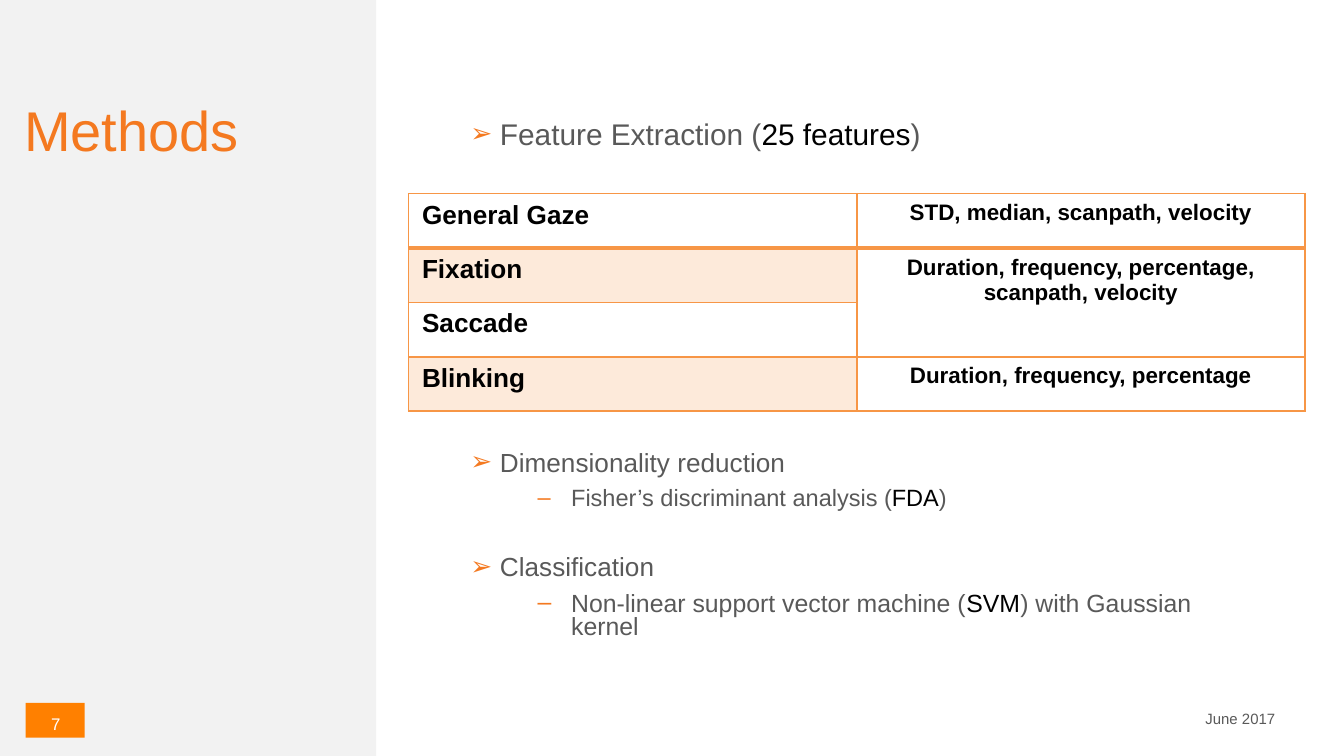
from lxml import etree
from pptx import Presentation
from pptx.dml.color import RGBColor
from pptx.enum.shapes import MSO_SHAPE
from pptx.enum.text import MSO_ANCHOR, PP_ALIGN
from pptx.oxml.ns import qn
from pptx.util import Inches, Pt

RECTANGLE = MSO_SHAPE.RECTANGLE
TOP = MSO_ANCHOR.TOP
LEFT, CENTER = PP_ALIGN.LEFT, PP_ALIGN.CENTER

ORANGE = RGBColor(0xF4, 0x79, 0x20)
BADGE_ORANGE = RGBColor(0xFF, 0x80, 0x00)
BORDER_ORANGE = RGBColor(0xF7, 0x96, 0x46)
BAND = RGBColor(0xFD, 0xEA, 0xDA)
PANEL = RGBColor(0xF2, 0xF2, 0xF2)
GRAY = RGBColor(0x59, 0x59, 0x59)
BLACK = RGBColor(0, 0, 0)
WHITE = RGBColor(0xFF, 0xFF, 0xFF)
FONT = "Arial"

SLIDE_WIDTH = 10
SLIDE_HEIGHT = SLIDE_WIDTH * 9 / 16

TITLE = "Methods"
DATE = "June 2017"
PAGE = "7"

FEATURES = [
    ("General Gaze", "STD, median, scanpath, velocity"),
    ("Fixation", "Duration, frequency, percentage, scanpath, velocity"),
    ("Saccade", ""),
    ("Blinking", "Duration, frequency, percentage"),
]
MERGED_ROWS = (1, 2)

EXTRACTION = [
    (1, 16, 0, [("Feature Extraction (", GRAY), ("25 features", BLACK), (")", GRAY)]),
]
STEPS = [
    (1, 14, 0, [("Dimensionality reduction", GRAY)]),
    (2, 12.6, 0, [("Fisher’s discriminant analysis (", GRAY), ("FDA", BLACK), (")", GRAY)]),
    (1, 14, 15, [("Classification", GRAY)]),
    (2, 13.3, 0, [("Non-linear support vector machine (", GRAY), ("SVM", BLACK),
                  (") with Gaussian kernel", GRAY)]),
]
LEVELS = {
    1: {"bullet": "➢", "margin": 0.72, "hang": 0.22, "bullet_size": 14, "spacing": 1.0},
    2: {"bullet": "–", "margin": 1.25, "hang": 0.25, "bullet_size": None, "spacing": 0.8},
}


def add_run(paragraph, text, size, color, bold=False):
    run = paragraph.add_run()
    run.text = text
    run.font.name = FONT
    run.font.size = Pt(size)
    run.font.bold = bold
    run.font.color.rgb = color


def add_rectangle(slide, left, top, width, height, color):
    shape = slide.shapes.add_shape(
        RECTANGLE, Inches(left), Inches(top), Inches(width), Inches(height))
    shape.shadow.inherit = False
    shape.fill.solid()
    shape.fill.fore_color.rgb = color
    shape.line.fill.background()


def add_text_box(slide, left, top, width, height, wrap=True):
    box = slide.shapes.add_textbox(
        Inches(left), Inches(top), Inches(width), Inches(height))
    box.text_frame.word_wrap = wrap
    return box.text_frame


def add_bullet(paragraph, level, size):
    properties = paragraph._p.get_or_add_pPr()
    properties.set("marL", str(Inches(level["margin"])))
    properties.set("indent", str(-Inches(level["hang"])))
    color = etree.SubElement(properties, qn("a:buClr"))
    etree.SubElement(color, qn("a:srgbClr"), val=str(ORANGE))
    percent = (level["bullet_size"] or size) / size * 100
    etree.SubElement(properties, qn("a:buSzPct"), val=str(round(percent) * 1000))
    etree.SubElement(properties, qn("a:buFont"), typeface=FONT)
    etree.SubElement(properties, qn("a:buChar"), char=level["bullet"])


def add_bullet_list(slide, left, top, width, height, items):
    frame = add_text_box(slide, left, top, width, height)
    frame.margin_left = Inches(0.2)
    for index, (level_number, size, space_before, runs) in enumerate(items):
        level = LEVELS[level_number]
        paragraph = frame.paragraphs[0] if index == 0 else frame.add_paragraph()
        add_bullet(paragraph, level, size)
        paragraph.line_spacing = level["spacing"]
        paragraph.space_before = Pt(space_before)
        paragraph.space_after = Pt(6)
        for text, color in runs:
            add_run(paragraph, text, size, color)


def set_borders(cell, widths):
    properties = cell._tc.get_or_add_tcPr()
    for index, (side, width) in enumerate(widths.items()):
        line = etree.Element(qn("a:" + side), w=str(Pt(width)))
        fill = etree.SubElement(line, qn("a:solidFill"))
        etree.SubElement(fill, qn("a:srgbClr"), val=str(BORDER_ORANGE))
        properties.insert(index, line)


def add_feature_table(slide):
    rows = len(FEATURES)
    frame = slide.shapes.add_table(
        rows, 2, Inches(3.04), Inches(1.44), Inches(6.67), Inches(1.62))
    table = frame.table
    first, last = MERGED_ROWS
    table.cell(first, 1).merge(table.cell(last, 1))
    for row, texts in enumerate(FEATURES):
        for column, text in enumerate(texts):
            cell = table.cell(row, column)
            cell.fill.solid()
            cell.fill.fore_color.rgb = BAND if column == 0 and row % 2 else WHITE
            set_borders(cell, {"lnL": 1, "lnR": 1,
                               "lnT": 2 if row == 1 else 1,
                               "lnB": 2 if row == 0 else 1})
            if text:
                paragraph = cell.text_frame.paragraphs[0]
                paragraph.alignment = CENTER if column else LEFT
                add_run(paragraph, text, 12 if column else 14, BLACK, bold=True)


def place_title(slide):
    title = slide.shapes.title
    title.left, title.top = Inches(0.08), Inches(0.66)
    title.width, title.height = Inches(2.54), Inches(2.59)
    title.text_frame.vertical_anchor = TOP
    paragraph = title.text_frame.paragraphs[0]
    paragraph.alignment = LEFT
    add_run(paragraph, TITLE, 30, ORANGE)
    slide.shapes._spTree.append(title._element)


def main():
    presentation = Presentation()
    presentation.slide_width = Inches(SLIDE_WIDTH)
    presentation.slide_height = Inches(SLIDE_HEIGHT)
    slide = presentation.slides.add_slide(presentation.slide_layouts[5])

    date = add_text_box(slide, 8.87, 5.23, 0.73, 0.24, wrap=False)
    add_run(date.paragraphs[0], DATE, 8, GRAY)
    add_rectangle(slide, 0, 0, 2.8, SLIDE_HEIGHT, PANEL)
    add_rectangle(slide, 0.19, 5.23, 0.44, 0.26, BADGE_ORANGE)
    page = add_text_box(slide, 0.22, 5.26, 0.39, 0.2)
    page.paragraphs[0].alignment = CENTER
    add_run(page.paragraphs[0], PAGE, 9, WHITE)

    place_title(slide)
    add_feature_table(slide)
    add_bullet_list(slide, 2.8, 3.27, 6.66, 1.7, STEPS)
    add_bullet_list(slide, 2.8, 0.81, 5.08, 0.56, EXTRACTION)
    presentation.save("out.pptx")


if __name__ == "__main__":
    main()
